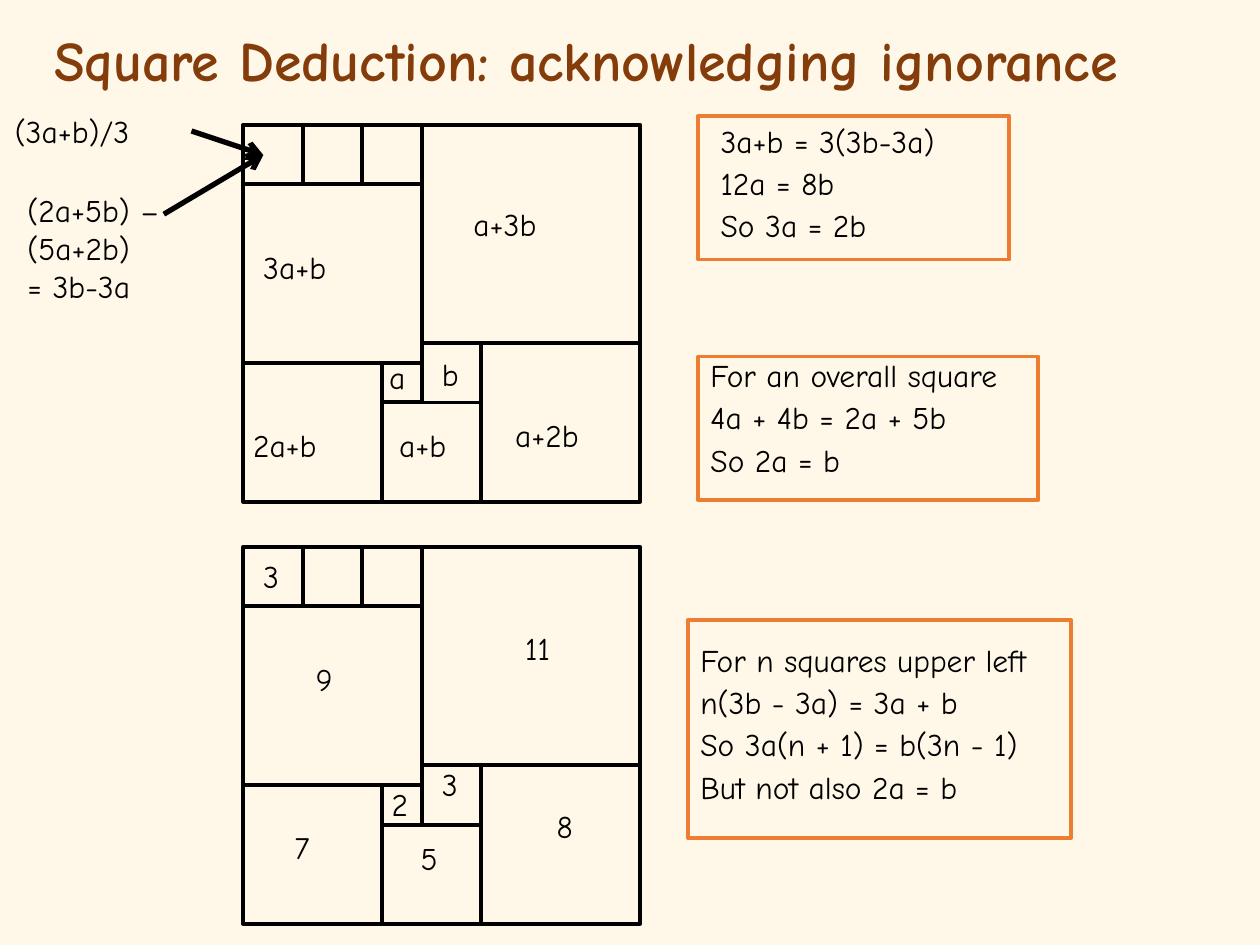
from lxml import etree
from pptx import Presentation
from pptx.dml.color import RGBColor
from pptx.enum.shapes import MSO_CONNECTOR, MSO_SHAPE
from pptx.enum.text import MSO_ANCHOR, PP_ALIGN
from pptx.oxml.ns import qn
from pptx.util import Inches, Pt

FONT = "Comic Neue"
color = RGBColor.from_string

prs = Presentation()
prs.slide_width, prs.slide_height = Inches(10), Inches(7.5)
s = prs.slides.add_slide(prs.slide_layouts[5])
s.background.fill.solid()
s.background.fill.fore_color.rgb = color("FFF8E9")


def add_text(x, y, w, h, lines, spacing=None):
    tf = s.shapes.add_textbox(Inches(x), Inches(y), Inches(w), Inches(h)).text_frame
    tf.word_wrap = True
    for i, line in enumerate(lines):
        p = tf.add_paragraph() if i else tf.paragraphs[0]
        if i:
            p.space_before = Pt(9)
        if spacing:
            p.line_spacing = spacing
        for j, part in enumerate(line.split("\n")):
            if j:
                p.add_line_break()
            r = p.add_run()
            r.text = part
            r.font.name, r.font.size = FONT, Pt(18)
            r.font.color.rgb = color("000000")
    return tf


def add_outline(x, y, w, h, line):
    sp = s.shapes.add_shape(MSO_SHAPE.RECTANGLE, Inches(x), Inches(y), Inches(w), Inches(h))
    sp.shadow.inherit = False
    sp.fill.background()
    sp.line.color.rgb = color(line)
    sp.line.width = Pt(2.25)


# Title
title = s.shapes.title
title.left, title.top = Inches(0.33), Inches(0.17)
title.width, title.height = Inches(9.47), Inches(0.67)
title.text_frame.vertical_anchor = MSO_ANCHOR.MIDDLE
p = title.text_frame.paragraphs[0]
p.alignment = PP_ALIGN.LEFT
p.line_spacing = 0.9
r = p.add_run()
r.text = "Square Deduction: acknowledging ignorance"
r.font.name, r.font.size, r.font.bold = FONT, Pt(32), True
r.font.color.rgb = color("843C0B")

# Two dissections of a 20 by 19 rectangle: column, row and side of each square.
# The square between the 2 and the 8 is outlined by its neighbours.
squares = [(7, 12, 2), (6, 0, 3), (7, 14, 5), (12, 11, 8), (9, 0, 11),
           (0, 12, 7), (0, 3, 9), (3, 0, 3), (0, 0, 3)]
left, unit = 1.93, 3.15 / 20
for top in (0.99, 4.34):
    for col, row, side in squares:
        add_outline(left + col * unit, top + row * unit, side * unit, side * unit, "000000")

# Labels inside the squares
labels = [
    ("a", 2.99, 2.79, 0.33), ("b", 3.41, 2.77, 0.33), ("a+b", 3.07, 3.33, 1),
    ("a+2b", 3.99, 3.25, 1.17), ("2a+b", 1.91, 3.33, 1.08),
    ("a+3b", 3.66, 1.58, 1.17), ("3a+b", 1.99, 1.92, 1.33),
    ("2", 3.01, 6.18, 0.33), ("3", 3.41, 6.02, 0.33), ("5", 3.24, 6.61, 0.33),
    ("8", 4.32, 6.36, 0.33), ("7", 2.24, 6.52, 0.33), ("9", 2.41, 5.19, 0.33),
    ("11", 4.07, 4.94, 0.5), ("3", 1.99, 4.37, 0.33),
]
for text, x, y, w in labels:
    add_text(x, y, w, 0.4, [text])

# Two expressions for the side of the small square, with arrows to it
add_text(0.02, 0.84, 1.5, 0.4, ["(3a+b)/3"])
add_text(0.12, 1.47, 1.33, 1.01, ["(2a+5b) – (5a+2b)\n= 3b-3a"])
for x, y in ((1.52, 1.04), (1.3, 1.7)):
    arrow = s.shapes.add_connector(MSO_CONNECTOR.STRAIGHT, Inches(x), Inches(y),
                                   Inches(2.09), Inches(1.23))
    arrow.line.color.rgb = color("000000")
    arrow.line.width = Pt(3)
    etree.SubElement(arrow.line._get_or_add_ln(), qn("a:tailEnd"), type="arrow")
    etree.SubElement(arrow._element.spPr, qn("a:effectLst"))

# Framed equations: text box, frame, lines
equations = [
    ((5.62, 1, 3.81, 1.05), (5.54, 0.92, 2.47, 1.14),
     ["3a+b = 3(3b-3a)", "12a = 8b", "So 3a = 2b"]),
    ((5.54, 2.86, 4.33, 1.05), (5.54, 2.83, 2.7, 1.14),
     ["For an overall square", "4a + 4b = 2a + 5b", "So 2a = b"]),
    ((5.46, 5.12, 4.5, 1.43), (5.46, 4.92, 3.04, 1.73),
     ["For n squares upper left", "n(3b - 3a) = 3a + b",
      "So 3a(n + 1) = b(3n - 1)", "But not also 2a = b"]),
]
for box, frame, lines in equations:
    add_text(*box, lines, spacing=0.7)
    add_outline(*frame, "ED7D31")

prs.save("out.pptx")
